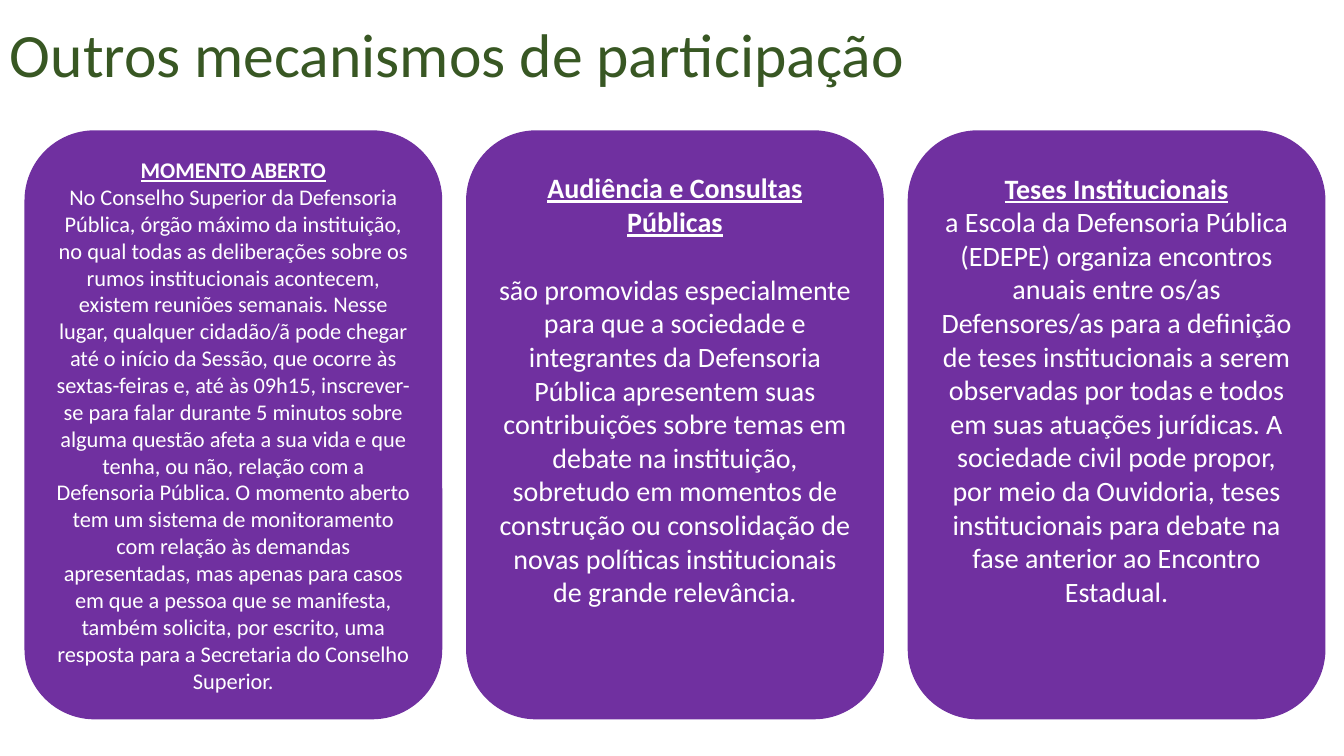
import pptx
import pptx.dml.color
import pptx.enum.shapes
import pptx.enum.text
import pptx.util
from dataclasses import dataclass

Inches, Pt = pptx.util.Inches, pptx.util.Pt
RGB = pptx.dml.color.RGBColor.from_string
MIDDLE = pptx.enum.text.MSO_ANCHOR.MIDDLE
CENTER = pptx.enum.text.PP_ALIGN.CENTER


@dataclass(frozen=True)
class Theme:
    font: str = "Calibri"
    title_color: str = "385723"
    card_color: str = "7030A0"
    card_text: str = "FFFFFF"
    title_size: int = 44
    long_size: int = 16
    short_size: int = 20


THEME = Theme()

CARDS = [
    dict(
        heading="MOMENTO ABERTO",
        body="No Conselho Superior da Defensoria Pública, órgão máximo da instituição, "
             "no qual todas as deliberações sobre os rumos institucionais acontecem, "
             "existem reuniões semanais. Nesse lugar, qualquer cidadão/ã pode chegar até "
             "o início da Sessão, que ocorre às sextas-feiras e, até às 09h15, "
             "inscrever-se para falar durante 5 minutos sobre alguma questão afeta a sua "
             "vida e que tenha, ou não, relação com a Defensoria Pública. O momento "
             "aberto tem um sistema de monitoramento com relação às demandas "
             "apresentadas, mas apenas para casos em que a pessoa que se manifesta, "
             "também solicita, por escrito, uma resposta para a Secretaria do Conselho "
             "Superior.",
        size=THEME.long_size, gap=0, top=0.05, bottom=0.05),
    dict(
        heading="Audiência e Consultas Públicas",
        body="são promovidas especialmente para que a sociedade e integrantes da "
             "Defensoria Pública apresentem suas contribuições sobre temas em debate na "
             "instituição, sobretudo em momentos de construção ou consolidação de novas "
             "políticas institucionais de grande relevância.",
        size=THEME.short_size, gap=24.4, top=0, bottom=0.7),
    dict(
        heading="Teses Institucionais",
        body="a Escola da Defensoria Pública (EDEPE) organiza encontros anuais entre "
             "os/as Defensores/as para a definição de teses institucionais a serem "
             "observadas por todas e todos em suas atuações jurídicas. A sociedade civil "
             "pode propor, por meio da Ouvidoria, teses institucionais para debate na "
             "fase anterior ao Encontro Estadual.",
        size=THEME.short_size, gap=0, top=0, bottom=0.7),
]


def set_attrs(obj, values):
    for name, value in values.items():
        setattr(obj, name, value)


def add_run(p, text, size, color, **fmt):
    r = p.add_run()
    r.text = text
    set_attrs(r.font, dict(name=THEME.font, size=Pt(size), **fmt))
    r.font.color.rgb = RGB(color)


def add_title(slide, text, box):
    tf = slide.shapes.add_textbox(*map(Inches, box)).text_frame
    set_attrs(tf, dict(word_wrap=True, vertical_anchor=MIDDLE))
    p = tf.paragraphs[0]
    p.line_spacing = 0.9
    add_run(p, text, THEME.title_size, THEME.title_color)


def add_card(slide, card, box):
    sp = slide.shapes.add_shape(
        pptx.enum.shapes.MSO_SHAPE.ROUNDED_RECTANGLE, *map(Inches, box))
    sp.shadow.inherit = False
    for fill in (sp.fill, sp.line.fill):
        fill.solid()
        fill.fore_color.rgb = RGB(THEME.card_color)
    sp.line.width = Pt(1)
    tf = sp.text_frame
    set_attrs(tf, dict(word_wrap=True, vertical_anchor=MIDDLE,
                       margin_top=Inches(card["top"]),
                       margin_bottom=Inches(card["bottom"])))
    heading, body = tf.paragraphs[0], tf.add_paragraph()
    set_attrs(heading, dict(alignment=CENTER))
    set_attrs(body, dict(alignment=CENTER, space_before=Pt(card["gap"])))
    add_run(heading, card["heading"], card["size"], THEME.card_text,
            bold=True, underline=True)
    add_run(body, card["body"], card["size"], THEME.card_text)


def add_card_row(slide, cards, box, gap):
    """Spread equal cards across the box."""
    left, top, width, height = box
    card_w = (width - gap * (len(cards) - 1)) / len(cards)
    for i, card in enumerate(cards):
        add_card(slide, card, (left + i * (card_w + gap), top, card_w, height))


def main():
    prs = pptx.Presentation()
    set_attrs(prs, dict(slide_width=Inches(13.33), slide_height=Inches(7.5)))
    slide = prs.slides.add_slide(prs.slide_layouts[6])
    add_title(slide, "Outros mecanismos de participação", (0, -0.15, 11.5, 1.45))
    add_card_row(slide, CARDS, (0.25, 1.3, 12.89, 5.83), gap=0.25)
    prs.save("out.pptx")


if __name__ == "__main__":
    main()
